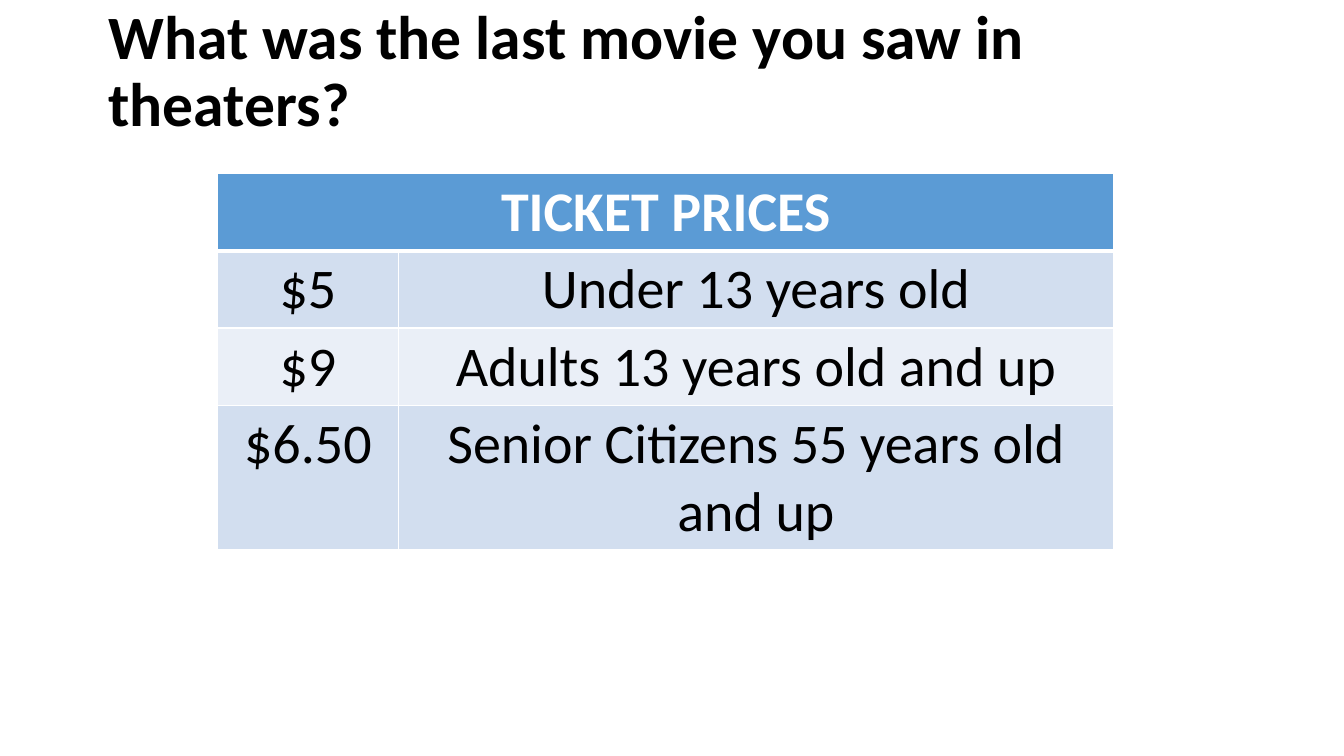
import pptx
import pptx.dml.color
import pptx.enum.text
import pptx.oxml
import pptx.oxml.ns
import pptx.util

Pt = pptx.util.Pt


def style_text(paragraph, size, color, bold):
    paragraph.font.name = "Calibri"
    paragraph.font.size = Pt(size)
    paragraph.font.bold = bold
    paragraph.font.color.rgb = pptx.dml.color.RGBColor.from_string(color)


def add_border(cell, side, width, color):
    properties = cell._tc.get_or_add_tcPr()
    line = pptx.oxml.parse_xml(
        f'<a:{side} {pptx.oxml.ns.nsdecls("a")} w="{Pt(width)}">'
        f'<a:solidFill><a:srgbClr val="{color}"/></a:solidFill></a:{side}>'
    )
    properties.append(line)


deck = pptx.Presentation()
deck.slide_width = Pt(960)
deck.slide_height = Pt(540)
slide = deck.slides.add_slide(deck.slide_layouts[6])

title_box = slide.shapes.add_textbox(Pt(70.56), Pt(0), Pt(828), Pt(104.4))
title_frame = title_box.text_frame
title_frame.word_wrap = True
title_frame.vertical_anchor = pptx.enum.text.MSO_ANCHOR.MIDDLE
title = title_frame.paragraphs[0]
title.text = "What was the last movie you saw in theaters?"
title.line_spacing = 0.9
style_text(title, 44, "000000", True)

rows = [
    ("TICKET PRICES", ""),
    ("$5", "Under 13 years old"),
    ("$9", "Adults 13 years old and up"),
    ("$6.50", "Senior Citizens 55 years old and up"),
]
row_fills = ["5B9BD5", "D2DEEF", "EAEFF7", "D2DEEF"]

price_frame = slide.shapes.add_table(4, 2, Pt(155.52), Pt(123.84), Pt(640.08), Pt(116.8))
price_table = price_frame.table
price_table.columns[0].width = Pt(128.88)
price_table.columns[1].width = Pt(511.2)
price_frame.height = Pt(268.56)
price_table.cell(0, 0).merge(price_table.cell(0, 1))

for row_index, (texts, fill) in enumerate(zip(rows, row_fills)):
    header = row_index == 0
    for column_index, text in enumerate(texts):
        cell = price_table.cell(row_index, column_index)
        for side in ("lnL", "lnR", "lnT", "lnB"):
            below_header = (row_index, side) in ((0, "lnB"), (1, "lnT"))
            add_border(cell, side, 3 if below_header else 1, "FFFFFF")
        cell.fill.solid()
        cell.fill.fore_color.rgb = pptx.dml.color.RGBColor.from_string(fill)
        para = cell.text_frame.paragraphs[0]
        para.text = text
        para.alignment = pptx.enum.text.PP_ALIGN.CENTER
        style_text(para, 40, "FFFFFF" if header else "000000", header)

deck.save("out.pptx")
